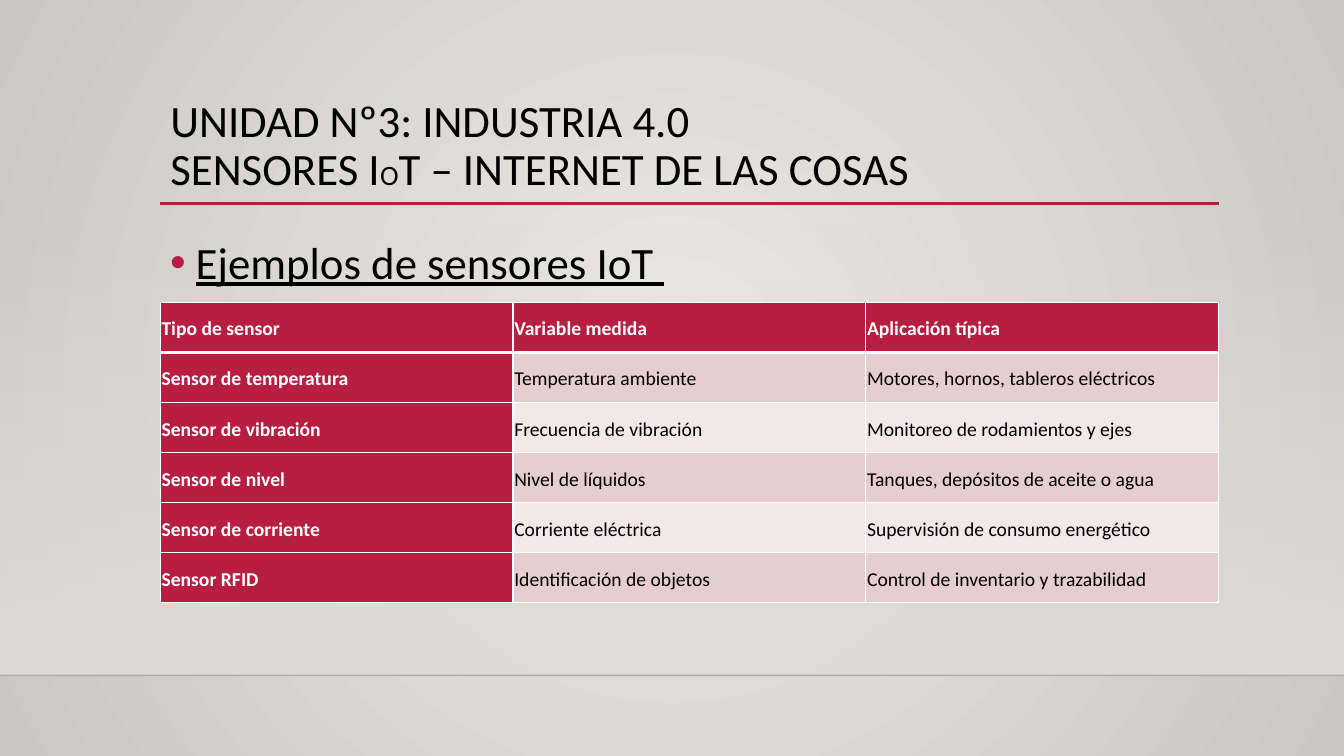
"""Build the slide on example IoT sensors."""
from lxml import etree
from pptx import Presentation
from pptx.dml.color import RGBColor
from pptx.enum.shapes import MSO_CONNECTOR, MSO_SHAPE
from pptx.enum.text import MSO_ANCHOR, MSO_AUTO_SIZE, PP_ALIGN
from pptx.oxml.ns import qn
from pptx.util import Cm, Pt

STRAIGHT, RECT = MSO_CONNECTOR.STRAIGHT, MSO_SHAPE.RECTANGLE
TOP, MIDDLE = MSO_ANCHOR.TOP, MSO_ANCHOR.MIDDLE
NO_FIT, LEFT = MSO_AUTO_SIZE.NONE, PP_ALIGN.LEFT

COLORS = {
    "accent": "B71E42", "text": "000000", "white": "FFFFFF",
    "band_dark": "E6CDCF", "band_light": "F3E8E9",
    "bg_center": "ECEAE7", "bg_edge": "CAC7C1", "floor": "DFDBD5",
}
SLIDE_W, SLIDE_H = 33.87, 19.05
MARGIN, CONTENT_W = 4.04, 26.67
FLOOR_Y = 17.02

SENSORS = [
    ("Tipo de sensor", "Variable medida", "Aplicación típica"),
    ("Sensor de temperatura", "Temperatura ambiente", "Motores, hornos, tableros eléctricos"),
    ("Sensor de vibración", "Frecuencia de vibración", "Monitoreo de rodamientos y ejes"),
    ("Sensor de nivel", "Nivel de líquidos", "Tanques, depósitos de aceite o agua"),
    ("Sensor de corriente", "Corriente eléctrica", "Supervisión de consumo energético"),
    ("Sensor RFID", "Identificación de objetos", "Control de inventario y trazabilidad"),
]


def rgb(name):
    """Return the named colour."""
    return RGBColor.from_string(COLORS[name])


def sub(parent, tag, **attrs):
    """Append a DrawingML child element."""
    return etree.SubElement(parent, qn(tag), attrs)


class SlideBuilder:
    """Holds the style and the current slide."""

    font = "Calibri"

    def __init__(self, prs):
        """Add a title-only slide."""
        self.s = prs.slides.add_slide(prs.slide_layouts[5])

    def gradient(self, fill, first, last):
        """Give a fill two gradient stops and return its element."""
        fill.gradient()
        for stop, name, position in zip(fill.gradient_stops, (first, last), (0, 1)):
            stop.color.rgb = rgb(name)
            stop.position = position

    def background(self):
        """Paint the radial background."""
        self.gradient(self.s.background.fill, "bg_center", "bg_edge")
        grad = next(self.s.element.iter(qn("a:gradFill")))
        grad.remove(grad.find(qn("a:lin")))
        circle = sub(grad, "a:path", path="circle")
        sub(circle, "a:fillToRect", l="50000", t="50000", r="50000", b="50000")

    def fade(self, x, y, w, h):
        """Add a rectangle that fades in downwards."""
        sp = self.s.shapes.add_shape(RECT, Cm(x), Cm(y), Cm(w), Cm(h))
        sp.shadow.inherit = False
        sp.line.fill.background()
        self.gradient(sp.fill, "floor", "floor")
        sp.fill.gradient_angle = 270
        sub(next(sp.element.iter(qn("a:srgbClr"))), "a:alpha", val="0")

    def rule(self, x, y, w, color, width, alpha=100):
        """Add a horizontal line."""
        line = self.s.shapes.add_connector(STRAIGHT, Cm(x), Cm(y), Cm(x + w), Cm(y))
        line.line.color.rgb = rgb(color)
        line.line.width = Pt(width)
        if alpha < 100:
            sub(next(line.element.iter(qn("a:srgbClr"))), "a:alpha", val=str(alpha * 1000))
        sub(line.element.spPr, "a:effectLst")

    def run(self, p, text, size, color="text", bold=False, underline=False):
        """Add a formatted run."""
        r = p.add_run()
        r.text = text
        r.font.name = self.font
        r.font.size = Pt(size)
        r.font.color.rgb = rgb(color)
        r.font.bold = bold
        r.font.underline = underline

    def title(self, x, y, w, h, lines):
        """Place the title and fill in its lines of runs."""
        sp = self.s.shapes.title
        sp.left, sp.top, sp.width, sp.height = Cm(x), Cm(y), Cm(w), Cm(h)
        tf = sp.text_frame
        tf.word_wrap, tf.auto_size, tf.vertical_anchor = True, NO_FIT, MIDDLE
        p = tf.paragraphs[0]
        p.alignment, p.line_spacing = LEFT, 0.9
        for i, runs in enumerate(lines):
            if i:
                p.add_line_break()
            for text, size in runs:
                self.run(p, text, size)

    def bullet(self, x, y, w, h, text):
        """Add a text box with one underlined bullet."""
        tf = self.s.shapes.add_textbox(Cm(x), Cm(y), Cm(w), Cm(h)).text_frame
        tf.word_wrap, tf.vertical_anchor = True, TOP
        p = tf.paragraphs[0]
        pPr = p._p.get_or_add_pPr()
        pPr.set("marL", str(Cm(0.64)))
        pPr.set("indent", str(Cm(-0.64)))
        sub(sub(pPr, "a:buClr"), "a:srgbClr", val=COLORS["accent"])
        sub(pPr, "a:buFont", typeface="Arial")
        sub(pPr, "a:buChar", char="•")
        p.line_spacing, p.space_after = 1.15, Pt(8)
        self.run(p, text, 32, underline=True)

    def borders(self, cell, top, bottom):
        """Draw white borders around a cell."""
        tcPr = cell._tc.get_or_add_tcPr()
        for side, width in (("L", 1), ("R", 1), ("T", top), ("B", bottom)):
            ln = sub(tcPr, f"a:ln{side}", w=str(Pt(width)))
            sub(sub(ln, "a:solidFill"), "a:srgbClr", val=COLORS["white"])

    def table(self, x, y, w, h, rows):
        """Add a table with accented first row and column."""
        size = len(rows), len(rows[0])
        table = self.s.shapes.add_table(*size, Cm(x), Cm(y), Cm(w), Cm(h)).table
        table.first_col = True
        for i, row in enumerate(rows):
            for j, text in enumerate(row):
                cell = table.cell(i, j)
                head = i == 0 or j == 0
                self.borders(cell, 3 if i == 1 else 1, 3 if i == 0 else 1)
                band = "band_dark" if i % 2 else "band_light"
                cell.fill.solid()
                cell.fill.fore_color.rgb = rgb("accent" if head else band)
                cell.vertical_anchor = MIDDLE
                cell.margin_left = cell.margin_right = Cm(0.03)
                cell.margin_top = cell.margin_bottom = Cm(0.03)
                p = cell.text_frame.paragraphs[0]
                p.line_spacing, p.space_after = 1.15, Pt(8)
                self.run(p, text, 14, "white" if head else "text", bold=head)


def main():
    """Build and save the slide."""
    prs = Presentation()
    prs.slide_width, prs.slide_height = Cm(SLIDE_W), Cm(SLIDE_H)
    slide = SlideBuilder(prs)
    slide.background()
    slide.fade(0, 5.61, SLIDE_W, FLOOR_Y - 5.61)
    slide.rule(0, FLOOR_Y, SLIDE_W, "text", 1, alpha=20)
    slide.rule(MARGIN, 5.13, CONTENT_W, "accent", 2.5)
    slide.title(MARGIN, 2.24, CONTENT_W, 2.92, [
        [("UNIDAD Nº3: INDUSTRIA 4.0", 32)],
        [("SENSORES I", 32), ("O", 20), ("T – INTERNET DE LAS COSAS", 32)],
    ])
    slide.bullet(MARGIN, 5.59, CONTENT_W, 9.58, "Ejemplos de sensores IoT ")
    slide.table(MARGIN, 7.62, CONTENT_W, 7.57, SENSORS)
    prs.save("out.pptx")


if __name__ == "__main__":
    main()
